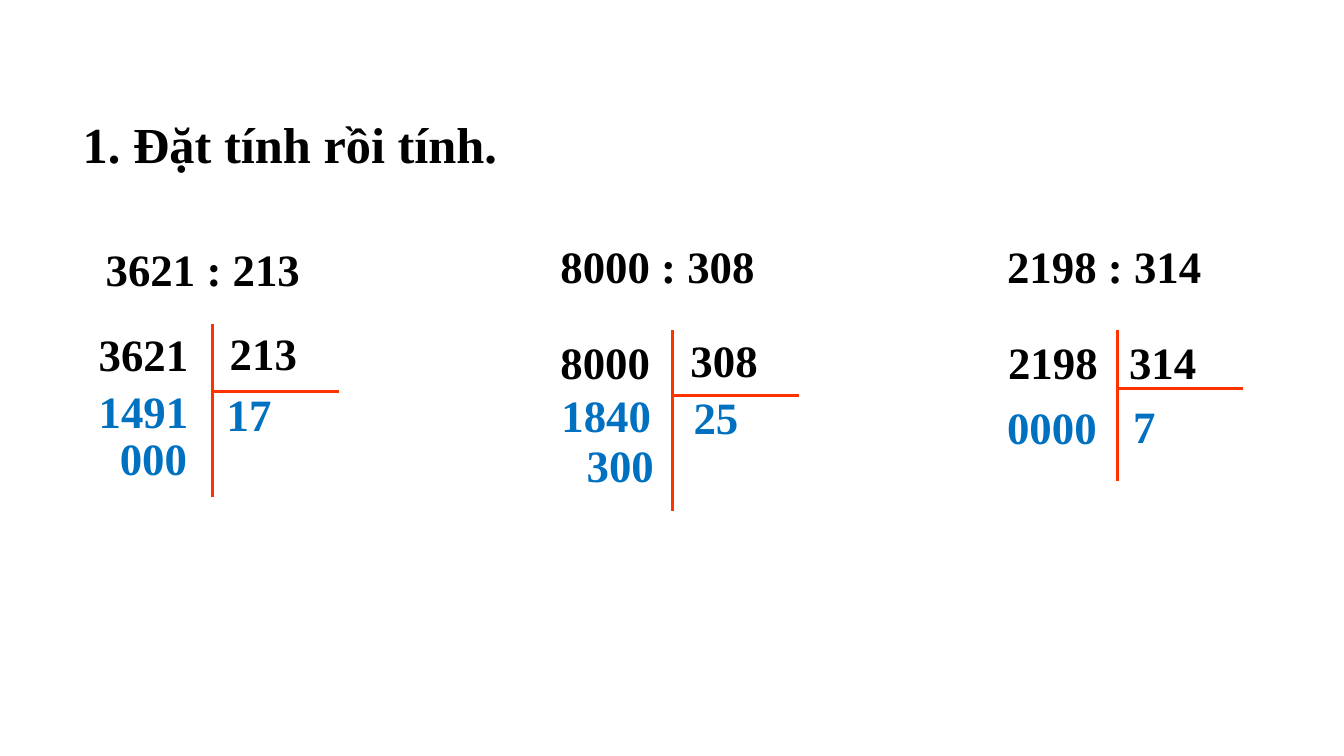
"""Builds a slide with three long divisions set out by hand."""
from lxml.etree import SubElement
from pptx import Presentation
from pptx.dml.color import RGBColor
from pptx.enum.text import MSO_ANCHOR, MSO_AUTO_SIZE, PP_ALIGN
from pptx.oxml.ns import qn
from pptx.util import Inches, Pt

FONT = "Times New Roman"
COLORS = {"given": "000000", "answer": "0070C0", "rule": "FF3300", "page": "FFFFFF"}
NUMBER_WIDTHS = {1: 0.43, 2: 0.65, 3: 0.88, 4: 1.1}
NUMBER_HEIGHT = 0.64
BAR_LENGTH = 1.25

DIVISIONS = [
    {
        "problem": ("3621 : 213", 0.95, 2.35, 3.5),
        "bracket": (2.11, 3.21, 4.93, 3.88),
        "given": [("3621", 0.88, 3.19), ("213", 2.18, 3.18)],
        "answer": [("1491", 0.88, 3.76), ("17", 2.15, 3.79), ("000", 1.09, 4.22)],
    },
    {
        "problem": ("8000 : 308", 5.46, 2.32, 2.83),
        "bracket": (6.67, 3.27, 5.07, 3.92),
        "given": [("8000", 5.46, 3.27), ("308", 6.75, 3.25)],
        "answer": [("1840", 5.47, 3.8), ("25", 6.78, 3.82), ("300", 5.72, 4.29)],
    },
    {
        "problem": ("2198 : 314", 9.89, 2.32, 2.83),
        "bracket": (11.08, 3.27, 4.77, 3.85),
        "given": [("2198", 9.9, 3.27), ("314", 11.1, 3.27)],
        "answer": [("0000", 9.89, 3.92), ("7", 11.14, 3.91)],
    },
]


def write(frame, text, size, color, wrap=False):
    """Put one bold, left-aligned run into a text frame."""
    frame.word_wrap = wrap
    frame.auto_size = MSO_AUTO_SIZE.SHAPE_TO_FIT_TEXT
    frame.vertical_anchor = MSO_ANCHOR.TOP
    paragraph = frame.paragraphs[0]
    paragraph.alignment = PP_ALIGN.LEFT
    run = paragraph.add_run()
    run.text = text
    run.font.name = FONT
    run.font.size = Pt(size)
    run.font.bold = True
    run.font.color.rgb = RGBColor.from_string(COLORS[color])


def add_heading(slide, text):
    """Place the exercise heading in the title placeholder."""
    heading = slide.shapes.title
    heading.left, heading.top = Inches(0.72), Inches(1.07)
    heading.width, heading.height = Inches(4.35), Inches(0.71)
    write(heading.text_frame, text, 36, "given")


def add_problem(slide, text, left, top, width):
    """Add the division written on one line."""
    problem = slide.shapes.add_textbox(
        Inches(left), Inches(top), Inches(width), Inches(0.63))
    write(problem.text_frame, text, 32, "given", wrap=True)


def add_number(slide, text, left, top, color):
    """Add one number of the working, as wide as its digits."""
    number = slide.shapes.add_textbox(
        Inches(left), Inches(top), Inches(NUMBER_WIDTHS[len(text)]), Inches(NUMBER_HEIGHT))
    write(number.text_frame, text, 32, color)


def add_rule(bracket, start, end):
    """Add one plain red line to a division bracket."""
    rule = bracket.shapes.add_connector(1, *map(Inches, start + end))
    rule.line.color.rgb = RGBColor.from_string(COLORS["rule"])
    rule.line.width = Pt(2.25)
    SubElement(rule._element.spPr, qn("a:effectLst"))


def add_bracket(slide, left, top, bottom, bar):
    """Add the upright and the bar that part divisor and quotient."""
    bracket = slide.shapes.add_group_shape()
    add_rule(bracket, (left, top), (left, bottom))
    add_rule(bracket, (left + BAR_LENGTH, bar), (left, bar))


def main():
    """Build the slide and save it."""
    deck = Presentation()
    deck.slide_width, deck.slide_height = Inches(13.33), Inches(7.5)
    slide = deck.slides.add_slide(deck.slide_layouts[5])
    slide.background.fill.solid()
    slide.background.fill.fore_color.rgb = RGBColor.from_string(COLORS["page"])
    add_heading(slide, "1. Đặt tính rồi tính.")
    for division in DIVISIONS:
        add_problem(slide, *division["problem"])
        add_bracket(slide, *division["bracket"])
        for color in ("given", "answer"):
            for text, left, top in division[color]:
                add_number(slide, text, left, top, color)
    deck.save("out.pptx")


if __name__ == "__main__":
    main()
